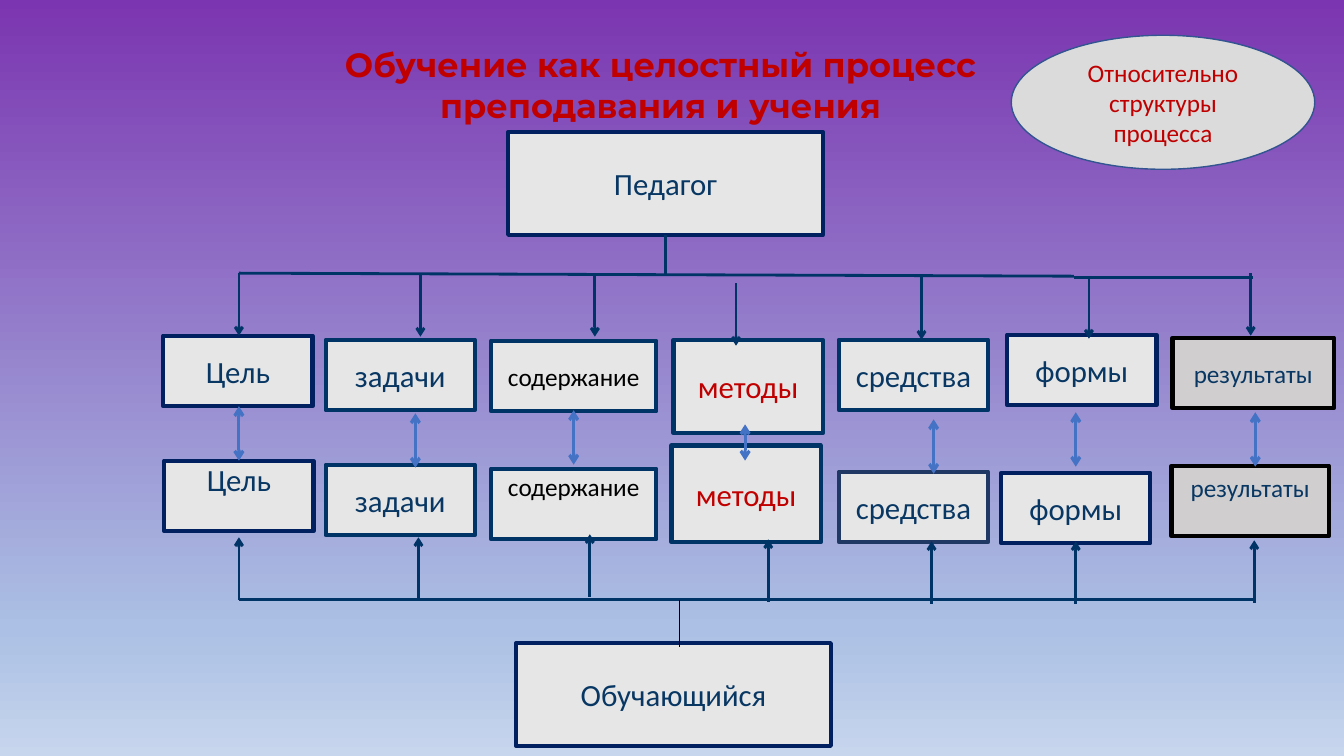
from copy import deepcopy

from pptx import Presentation
from pptx import util as u
from pptx.dml.color import RGBColor
from pptx.enum import shapes, text
from pptx.oxml.ns import qn
from pptx.oxml.xmlchemy import OxmlElement

# Grid: square cells, 133.3 columns by 75 rows
CELL = 0.1
COLUMNS, ROWS = 133.3, 75

NAVY, DEEP, INK = "002060", "003366", "083763"
RED, BLACK, PALE, GREY, BLUE = "C00000", "000000", "E7E6E6", "D0CECE", "4472C4"

BACKDROP = [(0, "7B35B0"), (0.83, "ABC0E4"), (1, "C7D5ED")]

# Stage: label, box format, teaching box, learning box (column, row, width, height)
STAGES = [
    ("Цель", dict(edge=NAVY), (16.2, 33.3, 14.8, 7), (16.3, 45.7, 14.8, 7)),
    ("задачи", dict(), (32.3, 33.7, 14.8, 7), (32.3, 46.1, 14.8, 7)),
    ("содержание", dict(size=18, ink=BLACK), (48.7, 33.8, 16.4, 7), (48.7, 46.5, 16.4, 7)),
    ("методы", dict(ink=RED), (66.8, 33.7, 14.8, 9.3), (66.6, 44.2, 14.8, 9.6)),
    ("средства", dict(), (83.2, 33.7, 14.8, 7), (83.2, 46.8, 14.8, 7)),
    ("формы", dict(edge=NAVY), (99.9, 33.2, 14.8, 7), (99.3, 46.9, 14.8, 7)),
    ("результаты", dict(size=18, fill=GREY, edge=BLACK),
     (116.3, 33.5, 16, 7), (116.2, 46.2, 15.6, 7)),
]
# Learning boxes that differ: raised text (inset in rows) or another edge
LEARNING_FORMAT = {
    "Цель": dict(raised=0),
    "содержание": dict(raised=0.3),
    "результаты": dict(raised=0.7),
    "средства": dict(edge="203864"),
}

# Arrows: column and starting row of each, with one length per group
DOWN = [(23.7, 27.1), (41.7, 27.2), (59, 27.2), (73, 28.1), (91.4, 27.5), (108, 27.4),
        (124.05, 27.1)]
UP = [(23.7, 59.5), (41.5, 59.5), (58.5, 59.2), (76.2, 59.7), (92.4, 59.9), (106.7, 59.9),
      (124.4, 59.8)]
EXCHANGE = [(23.7, 40.3), (41.2, 41), (56.9, 40.7), (73.9, 42.1), (92.6, 41.6),
            (106.7, 40.9), (124.5, 40.9)]
ARROW_ROWS, EXCHANGE_ROWS, SHORT_EXCHANGE_ROWS = 6.2, 5.4, 3.6


def grid(*cells):
    return [u.Inches(cell * CELL) for cell in cells]


def color(hex_code):
    return RGBColor.from_string(hex_code)


def apply(target, values):
    for name, value in values.items():
        setattr(target, name, value)


def write(frame, lines, ink, size, font="Calibri", bold=False, **frame_format):
    apply(frame, dict(word_wrap=True, **frame_format))
    for index, line in enumerate(lines):
        paragraph = frame.paragraphs[0] if index == 0 else frame.add_paragraph()
        paragraph.alignment = text.PP_ALIGN.CENTER
        run = paragraph.add_run()
        run.text = line
        apply(run.font, dict(name=font, size=u.Pt(size), bold=bold))
        run.font.color.rgb = color(ink)


def box(slide, label, place, fill=PALE, edge=DEEP, ink=INK, size=22, weight=3,
        kind=shapes.MSO_SHAPE.RECTANGLE, raised=None):
    node = slide.shapes.add_shape(kind, *grid(*place))
    node.shadow.inherit = False
    node.fill.solid()
    node.fill.fore_color.rgb = color(fill)
    node.line.color.rgb = color(edge)
    node.line.width = u.Pt(weight)
    frame_format = dict(vertical_anchor=text.MSO_ANCHOR.MIDDLE)
    if raised is not None:
        frame_format = dict(vertical_anchor=text.MSO_ANCHOR.TOP, margin_top=grid(raised)[0])
    write(node.text_frame, [label], ink, size, **frame_format)


def line(slide, start, end, ink=DEEP, weight=2, arrowheads=()):
    link = slide.shapes.add_connector(shapes.MSO_CONNECTOR.STRAIGHT, *grid(*start, *end))
    link.line.color.rgb = color(ink)
    link.line.width = u.Pt(weight)
    outline = link.line._get_or_add_ln()
    for end_name in arrowheads:
        head = OxmlElement(f"a:{end_name}")
        head.set("type", "arrow")
        outline.append(head)
    link.element.spPr.append(OxmlElement("a:effectLst"))


def vertical(slide, start, rows, **line_format):
    column, row = start
    line(slide, start, (column, row + rows), **line_format)


def paint_backdrop(slide):
    fill = slide.background.fill
    fill.gradient()
    fill.gradient_angle = 270
    stops = slide.element.find(".//" + qn("a:gsLst"))
    stops.append(deepcopy(stops[0]))
    for stop, (position, hex_code) in zip(fill.gradient_stops, BACKDROP):
        stop.position = position
        stop.color.rgb = color(hex_code)


def main():
    deck = Presentation()
    deck.slide_width, deck.slide_height = grid(COLUMNS, ROWS)
    slide = deck.slides.add_slide(deck.slide_layouts[6])
    paint_backdrop(slide)

    # Heading and remark
    heading = slide.shapes.add_textbox(*grid(17.4, 3.9, 96.2, 9.1))
    write(heading.text_frame, ["Обучение как целостный процесс", "преподавания и учения"],
          RED, 24, font="Montserrat", bold=True)
    box(slide, "Относительно структуры процесса", (100.3, 3.5, 30.1, 13.3), fill="DBDBDB",
        edge="325491", ink=RED, size=18, weight=1, kind=shapes.MSO_SHAPE.OVAL)

    # Participants
    box(slide, "Педагог", (50.4, 13.1, 31.2, 10.2), edge=NAVY)
    box(slide, "Обучающийся", (51.2, 63.8, 31.2, 10.2), edge=NAVY)

    # Stages of teaching and learning
    for label, look, teaching, learning in STAGES:
        box(slide, label, teaching, **look)
        box(slide, label, learning, **{**look, **LEARNING_FORMAT.get(label, {})})

    # Trunk lines
    line(slide, (23.7, 27.1), (106.5, 27.4))
    line(slide, (106.5, 27.5), (124.3, 27.5))
    line(slide, (23.7, 59.5), (124.3, 59.5))
    vertical(slide, (66, 23.3), 3.9)
    vertical(slide, (67.4, 59.5), 4.7, ink=BLACK, weight=1)

    # Arrows into the stages and between them
    for (label, *_), down, up, exchange in zip(STAGES, DOWN, UP, EXCHANGE):
        vertical(slide, down, ARROW_ROWS, arrowheads=["tailEnd"])
        vertical(slide, up, -ARROW_ROWS, arrowheads=["tailEnd"])
        rows = SHORT_EXCHANGE_ROWS if label == "методы" else EXCHANGE_ROWS
        vertical(slide, exchange, rows, ink=BLUE, weight=2.25,
                 arrowheads=["headEnd", "tailEnd"])

    deck.save("out.pptx")


if __name__ == "__main__":
    main()
